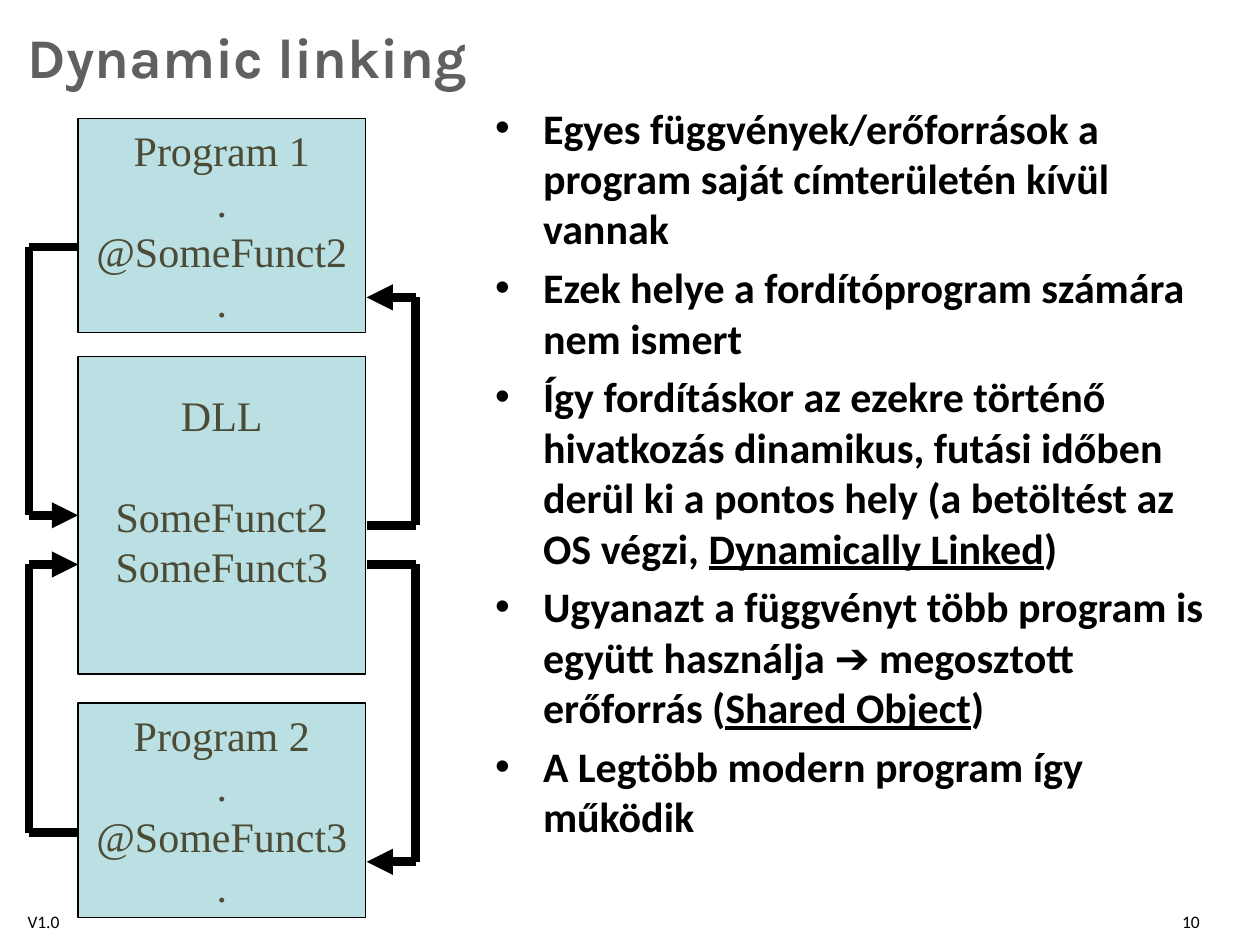
from itertools import pairwise

from pptx import Presentation
from pptx.dml.color import RGBColor
from pptx.enum.shapes import MSO_CONNECTOR as Connector, MSO_SHAPE as Shape
from pptx.enum.text import MSO_ANCHOR as Anchor, MSO_AUTO_SIZE as AutoSize, PP_ALIGN as Align
from pptx.oxml.ns import qn
from pptx.util import Inches, Pt
from lxml.etree import SubElement


def color(value):
    return RGBColor.from_string(value)


def add_span(para, text, rgb, **format_values):
    span = para.add_run()
    span.text = text
    span.font.color.rgb = color(rgb)
    for name, value in format_values.items():
        setattr(span.font, name, value)


deck = Presentation()
deck.slide_width, deck.slide_height = Inches(10), Inches(7.5)
page = deck.slides.add_slide(deck.slide_layouts[1])
title, body = page.placeholders

# Title and body frames
for holder, area, anchor in [
    (title, (0.12, 0.13, 9.76, 0.63), Anchor.MIDDLE),
    (body, (3.83, 0.76, 6.05, 6.3), Anchor.TOP),
]:
    holder.left, holder.top, holder.width, holder.height = map(Inches, area)
    holder.text_frame.auto_size = AutoSize.NONE
    holder.text_frame.vertical_anchor = anchor

# Title
para = title.text_frame.paragraphs[0]
para.alignment = Align.LEFT
add_span(para, "Dynamic linking", "606060", name="Karla", size=Pt(32), bold=True)

# Bullet list: the second part of an item is underlined
items = [
    ["Egyes függvények/erőforrások a program saját címterületén kívül vannak"],
    ["Ezek helye a fordítóprogram számára nem ismert"],
    ["Így fordításkor az ezekre történő hivatkozás dinamikus, futási időben "
     "derül ki a pontos hely (a betöltést az OS végzi, ", "Dynamically Linked", ")"],
    ["Ugyanazt a függvényt több program is együtt használja ➔ megosztott "
     "erőforrás (", "Shared Object", ")"],
    ["A Legtöbb modern program így működik"],
]
for number, parts in enumerate(items):
    para = body.text_frame.add_paragraph() if number else body.text_frame.paragraphs[0]
    props = para._p.get_or_add_pPr()
    props.set("marL", str(Inches(0.38)))
    props.set("indent", str(-Inches(0.38)))
    SubElement(props, qn("a:buChar"), char="•")
    para.space_before = Pt(4.8 if number else 0)
    for position, text in enumerate(parts):
        add_span(para, text, "000000", name="Calibri", size=Pt(24), bold=True,
                 underline=position == 1)

# Program and library boxes: top, height, bottom inset, lines with space before
boxes = [
    (0.94, 1.7, 0.05, [("Program 1", 0), (".", 0), ("@SomeFunct2", 0), (".", 0)]),
    (5.58, 1.7, 0.05, [("Program 2", 0), (".", 0), ("@SomeFunct3", 0), (".", 0)]),
    (2.83, 2.52, 0.45, [("DLL", 0), ("SomeFunct2", 28.8), ("SomeFunct3", 0)]),
]
for top, height, inset, lines in boxes:
    box = page.shapes.add_shape(
        Shape.RECTANGLE, Inches(0.62), Inches(top), Inches(2.28), Inches(height))
    box.shadow.inherit = False
    box.fill.solid()
    box.fill.fore_color.rgb = color("BBE0E3")
    box.line.color.rgb = color("000000")
    box.line.width = Pt(0.75)
    frame = box.text_frame
    frame.word_wrap = False
    frame.vertical_anchor = Anchor.MIDDLE
    frame.margin_bottom = Inches(inset)
    for number, (text, gap) in enumerate(lines):
        para = frame.add_paragraph() if number else frame.paragraphs[0]
        para.alignment = Align.CENTER
        para.line_spacing = Pt(28.8)
        para.space_before = Pt(gap)
        add_span(para, text, "4B4B36", name="Times New Roman", size=Pt(24))

# Calls and returns: box edge, outer x, start y, end y
links = [
    (0.62, 0.23, 1.96, 4.09),
    (2.91, 3.3, 4.17, 2.36),
    (0.62, 0.23, 6.61, 4.48),
    (2.91, 3.3, 4.48, 6.84),
]
for edge, outer, start, end in links:
    corners = [(edge, start), (outer, start), (outer, end), (edge, end)]
    for begin, finish in pairwise(corners):
        link = page.shapes.add_connector(
            Connector.STRAIGHT, *map(Inches, begin + finish))
        link.line.color.rgb = color("000000")
        link.line.width = Pt(5)
        SubElement(link._element.spPr, qn("a:effectLst"))
    # The last segment carries the arrowhead
    SubElement(link.line._get_or_add_ln(), qn("a:tailEnd"), type="triangle")

# Version and page number
for left, width, text, align in [
    (0.12, 0.79, "V1.0", Align.LEFT),
    (8.31, 1.31, "10", Align.RIGHT),
]:
    box = page.shapes.add_textbox(Inches(left), Inches(7.18), Inches(width), Inches(0.2))
    box.text_frame.word_wrap = True
    para = box.text_frame.paragraphs[0]
    para.alignment = align
    add_span(para, text, "000000", name="Calibri", size=Pt(10))

deck.save("out.pptx")
